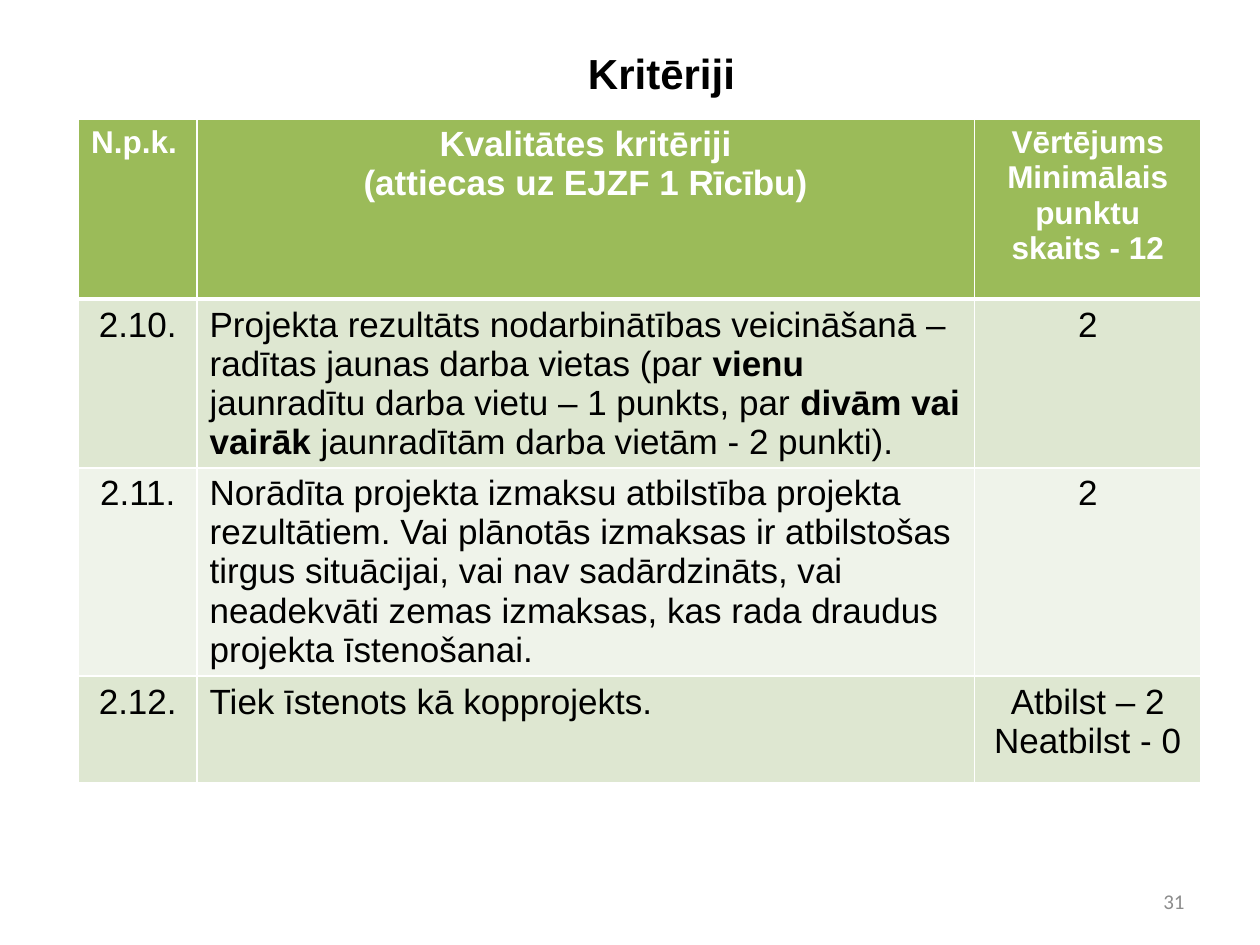
from dataclasses import dataclass

from lxml.etree import SubElement
from pptx import Presentation
from pptx.dml.color import RGBColor
from pptx.enum.text import MSO_ANCHOR as Anchor, PP_ALIGN as Align
from pptx.oxml.ns import qn
from pptx.util import Pt

COLORS = {
    "header": "9BBB59",
    "band_dark": "DEE7D1",
    "band_light": "EFF3EA",
    "white": "FFFFFF",
    "black": "000000",
    "number": "8C8C8C",
}
COLUMN_WIDTHS = (67.7, 444.2, 129.6)
ROW_HEIGHTS = (103, 96.5, 119, 61)


@dataclass
class Run:
    text: str
    bold: bool = False


@dataclass
class Cell:
    paragraphs: list[list[Run]]
    align: Align = Align.CENTER
    size: float = 20


def plain(*lines: str, align: Align = Align.CENTER) -> Cell:
    return Cell([[Run(line)] for line in lines], align)


def heading(*lines: str, size: float, align: Align = Align.CENTER) -> Cell:
    return Cell([[Run(line, True)] for line in lines], align, size)


ROWS = [
    [
        heading("N.p.k.", size=18, align=Align.LEFT),
        heading("Kvalitātes kritēriji", "(attiecas uz EJZF 1 Rīcību)", size=20),
        heading("Vērtējums Minimālais punktu skaits - 12", size=18),
    ],
    [
        plain("2.10."),
        Cell([[
            Run("Projekta rezultāts nodarbinātības veicināšanā – radītas jaunas darba vietas (par "),
            Run("vienu", True),
            Run(" jaunradītu darba vietu – 1 punkts, par "),
            Run("divām vai vairāk", True),
            Run(" jaunradītām darba vietām - 2 punkti)."),
        ]], Align.LEFT),
        plain("2"),
    ],
    [
        plain("2.11."),
        plain("Norādīta projekta izmaksu atbilstība projekta rezultātiem. "
              "Vai plānotās izmaksas ir atbilstošas tirgus situācijai, vai nav sadārdzināts, "
              "vai neadekvāti zemas izmaksas, kas rada draudus projekta īstenošanai.",
              align=Align.LEFT),
        plain("2"),
    ],
    [
        plain("2.12."),
        plain("Tiek īstenots kā kopprojekts.", align=Align.LEFT),
        plain("Atbilst – 2", "Neatbilst - 0"),
    ],
]


def add_run(paragraph, run: Run, size: float, color: str, font: str = "Arial") -> None:
    text_run = paragraph.add_run()
    text_run.text = run.text
    text_run.font.name = font
    text_run.font.size = Pt(size)
    text_run.font.bold = run.bold
    text_run.font.color.rgb = RGBColor.from_string(COLORS[color])


def fill_text(frame, content: Cell, color: str, font: str = "Arial") -> None:
    for index, runs in enumerate(content.paragraphs):
        paragraph = frame.add_paragraph() if index else frame.paragraphs[0]
        paragraph.alignment = content.align
        for run in runs:
            add_run(paragraph, run, content.size, color, font)


def set_borders(cell, widths: dict[str, float]) -> None:
    properties = cell._tc.get_or_add_tcPr()
    for position, (side, width) in enumerate(widths.items()):
        line = SubElement(properties, qn(f"a:{side}"), w=str(Pt(width)))
        fill = SubElement(line, qn("a:solidFill"))
        SubElement(fill, qn("a:srgbClr"), val=COLORS["white"])
        properties.insert(position, line)  # borders come before the fill


def add_criteria_table(slide) -> None:
    frame = slide.shapes.add_table(
        len(ROWS), len(COLUMN_WIDTHS), Pt(44.9), Pt(67.9),
        Pt(sum(COLUMN_WIDTHS)), Pt(sum(ROW_HEIGHTS)))
    table = frame.table
    for column, width in zip(table.columns, COLUMN_WIDTHS):
        column.width = Pt(width)
    for row_index, (contents, height) in enumerate(zip(ROWS, ROW_HEIGHTS)):
        table.rows[row_index].height = Pt(height)
        band = "band_dark" if row_index % 2 else "band_light"
        for column_index, content in enumerate(contents):
            cell = table.cell(row_index, column_index)
            cell.fill.solid()
            cell.fill.fore_color.rgb = RGBColor.from_string(
                COLORS[band if row_index else "header"])
            set_borders(cell, {
                "lnL": 1, "lnR": 1,
                "lnT": 3 if row_index == 1 else 1,
                "lnB": 1 if row_index else 3,
            })
            fill_text(cell.text_frame, content, "black" if row_index else "white")


def main() -> None:
    presentation = Presentation()
    presentation.slide_width, presentation.slide_height = Pt(720), Pt(540)
    slide = presentation.slides.add_slide(presentation.slide_layouts[5])

    # Title
    title = slide.shapes.title
    title.left, title.top, title.width, title.height = Pt(72), Pt(21.6), Pt(612), Pt(40.3)
    title.text_frame.vertical_anchor = Anchor.MIDDLE
    fill_text(title.text_frame, heading("Kritēriji", size=24), "black")

    # Criteria
    add_criteria_table(slide)

    # Slide number
    number = slide.shapes.add_textbox(Pt(516), Pt(500.5), Pt(168), Pt(28.8))
    number.text_frame.word_wrap = True
    number.text_frame.vertical_anchor = Anchor.MIDDLE
    fill_text(number.text_frame, Cell([[Run("31")]], Align.RIGHT, 12), "number", "Calibri")

    presentation.save("out.pptx")


if __name__ == "__main__":
    main()
